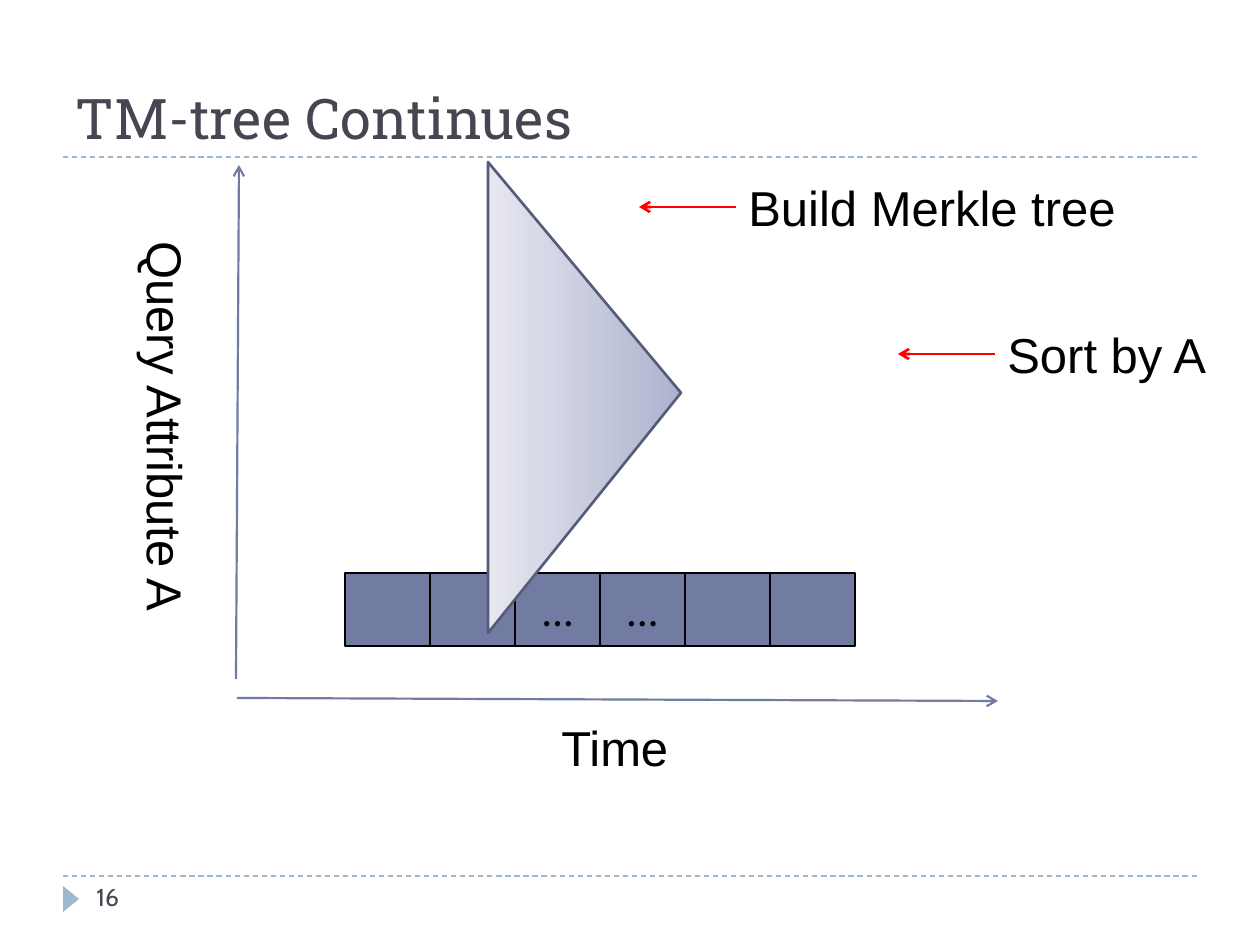
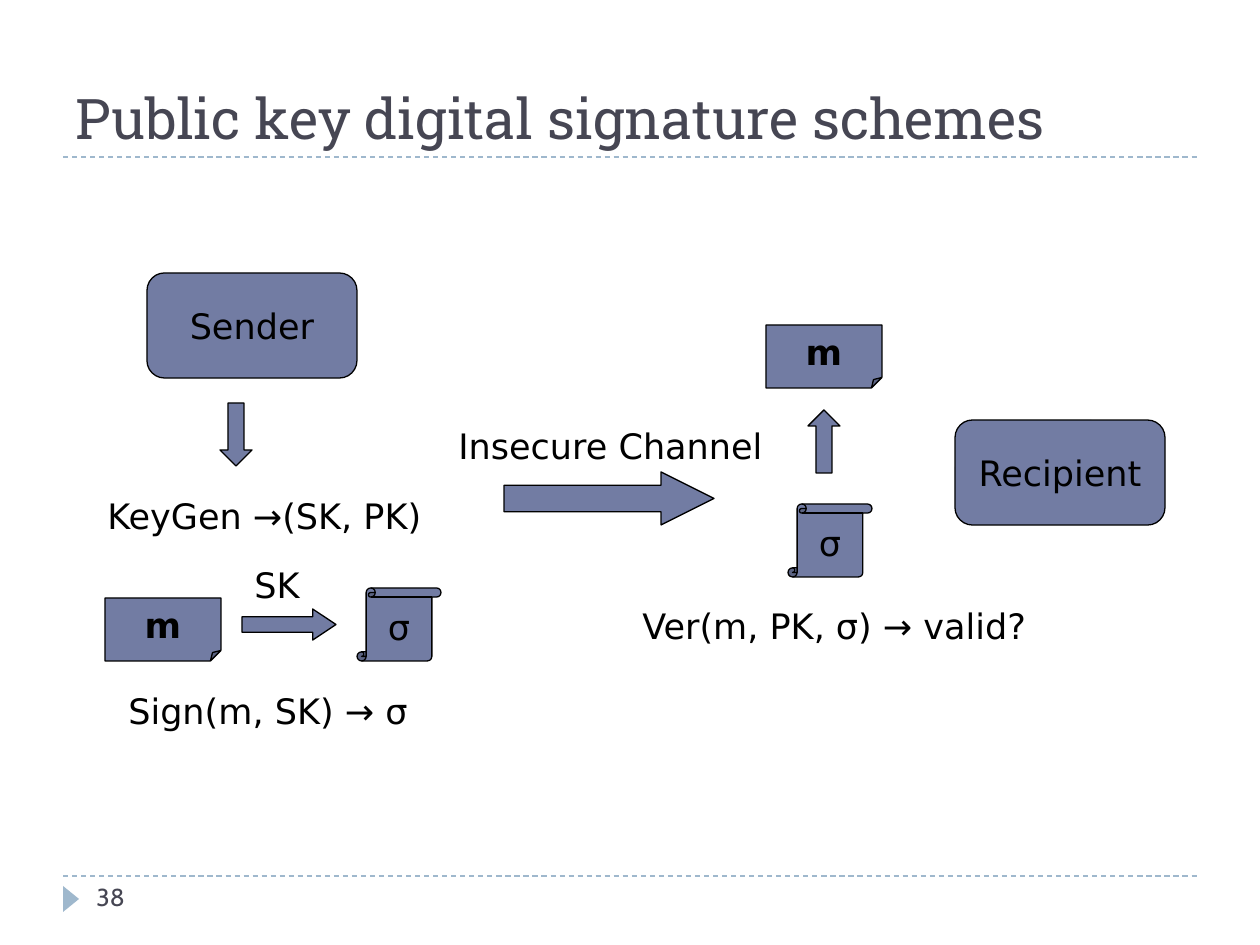
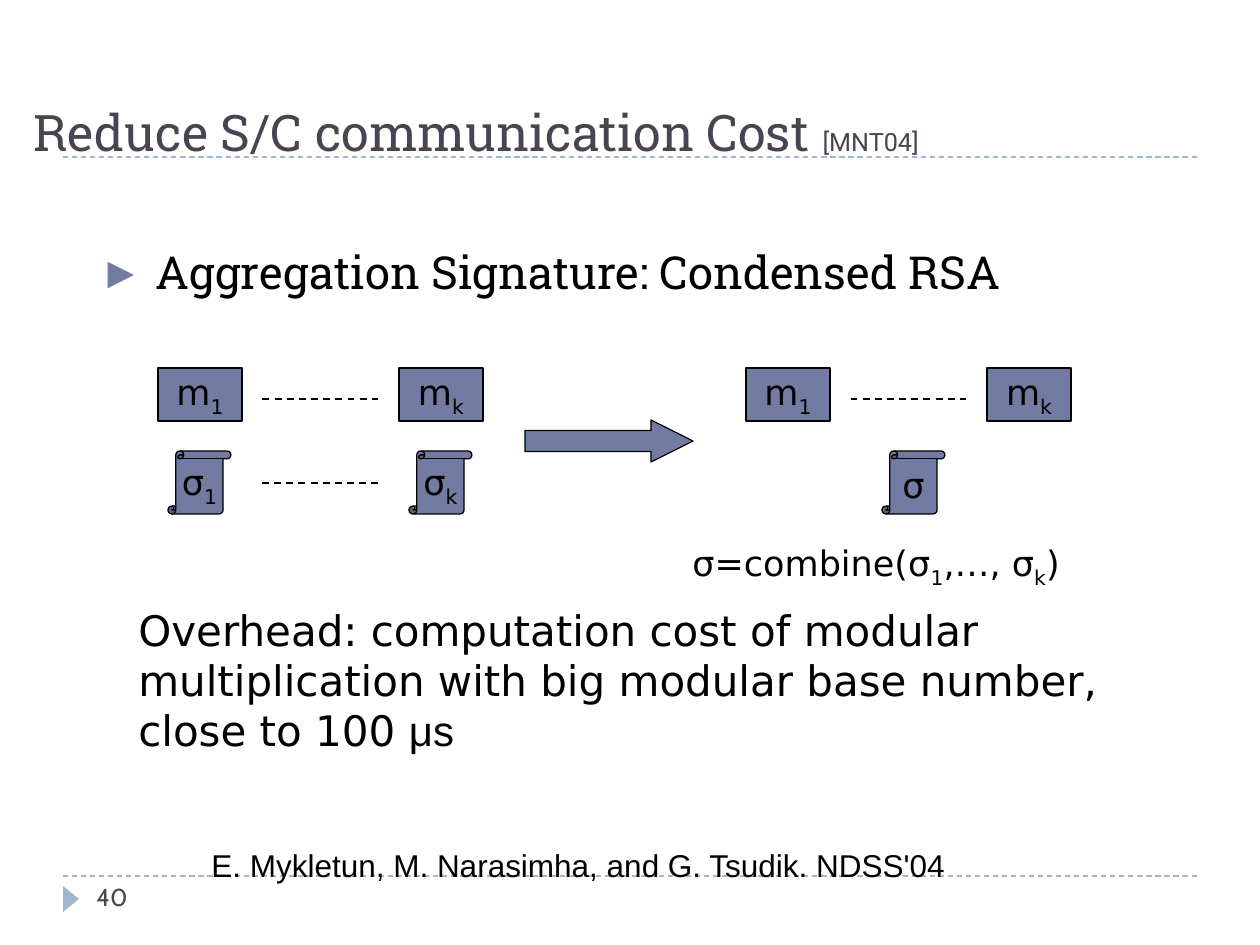
import pptx
import pptx.dml.color
import pptx.enum.dml
import pptx.enum.shapes
import pptx.enum.text
import pptx.oxml.ns
import pptx.util
from lxml import etree

PX = 914400 / 126
SLATE, PALE_BLUE, INK, BLACK, RED = "727CA3", "9FB8CD", "464653", "000000", "FF0000"
TITLE_FONT, LABEL_FONT, PLAIN_FONT = "Roboto Slab", "DejaVu Sans", "Arial"
TITLE_ONLY, TITLE_AND_BODY = 5, 1
SHAPE = pptx.enum.shapes.MSO_SHAPE
ALIGN = pptx.enum.text.PP_ALIGN
ANCHOR = pptx.enum.text.MSO_ANCHOR


def px(*lengths):
    """Turn px lengths into a list of EMU lengths."""
    return [pptx.util.Emu(round(length * PX)) for length in lengths]


def color(hex_code):
    """Turn a hex string into a colour."""
    return pptx.dml.color.RGBColor.from_string(hex_code)


def add_xml(parent, tag, **attributes):
    """Append a DrawingML element to a parent."""
    return etree.SubElement(parent, pptx.oxml.ns.qn(tag), attributes)


def set_font(font, size, name, hex_code=BLACK, bold=None):
    """Set the size, typeface, colour and weight of a font."""
    font.size = pptx.util.Pt(size)
    font.name = name
    font.bold = bold
    font.color.rgb = color(hex_code)


def write(paragraph, text):
    """Write text in which an underscore lowers the character after it."""
    first, *lowered = text.split("_")
    if first:
        paragraph.add_run().text = first
    for piece in lowered:
        subscript = paragraph.add_run()
        subscript.text = piece[0]
        subscript._r.get_or_add_rPr().set("baseline", "-25000")
        if piece[1:]:
            paragraph.add_run().text = piece[1:]


def place(shape, left, top, width, height):
    """Move and size a placeholder."""
    shape.left, shape.top, shape.width, shape.height = px(left, top, width, height)
    shape.text_frame.auto_size = pptx.enum.text.MSO_AUTO_SIZE.NONE


def caption(slide, text, box, size=20, font=LABEL_FONT, hex_code=BLACK):
    """Add free text, one paragraph a line, and return its frame."""
    frame = slide.shapes.add_textbox(*px(*box)).text_frame
    frame.word_wrap = True
    for index, line in enumerate(text.split("\n")):
        paragraph = frame.add_paragraph() if index else frame.paragraphs[0]
        write(paragraph, line)
        set_font(paragraph.font, size, font, hex_code)
    return frame


def block(slide, kind, box, text="", size=20, font=LABEL_FONT, bold=None, adjust=None):
    """Add a slate shape with a black outline and a centred label."""
    shape = slide.shapes.add_shape(kind, *px(*box))
    shape.shadow.inherit = False
    shape.fill.solid()
    shape.fill.fore_color.rgb = color(SLATE)
    shape.line.color.rgb = color(BLACK)
    shape.line.width = pptx.util.Pt(0.75)
    if adjust is not None:
        shape.adjustments[1] = adjust
    if text:
        frame = shape.text_frame
        frame.word_wrap = False
        frame.vertical_anchor = ANCHOR.MIDDLE
        paragraph = frame.paragraphs[0]
        paragraph.alignment = ALIGN.CENTER
        write(paragraph, text)
        set_font(paragraph.font, size, font, BLACK, bold)
    return shape


def stroke(slide, start, end, hex_code, width, dashed=False, arrow=False):
    """Add a straight line, dashed or with an arrowhead at its end."""
    connector = slide.shapes.add_connector(
        pptx.enum.shapes.MSO_CONNECTOR.STRAIGHT, *px(*start, *end))
    connector.line.color.rgb = color(hex_code)
    connector.line.width = pptx.util.Pt(width)
    if dashed:
        connector.line.dash_style = pptx.enum.dml.MSO_LINE.DASH
    if arrow:
        add_xml(connector.line._get_or_add_ln(), "a:tailEnd", type="arrow")
    add_xml(connector._element.spPr, "a:effectLst")


def start_slide(deck, layout, title, number, box=(63, 21, 1134, 136), size=32):
    """Add a slide with the shared rules, page marker, number and title."""
    slide = deck.slides.add_slide(deck.slide_layouts[layout])
    for rule_y in (876, 157):
        stroke(slide, (63, rule_y), (1197, rule_y), PALE_BLUE, 0.75, dashed=True)
    marker = block(slide, SHAPE.ISOSCELES_TRIANGLE, (58, 891, 26, 16))
    marker.rotation = 90
    marker.fill.fore_color.rgb = color(PALE_BLUE)
    marker.line.fill.background()
    caption(slide, number, (84, 876, 273, 50), 14, "Cabin", INK)
    heading = slide.shapes.title
    place(heading, *box)
    heading.text_frame.vertical_anchor = ANCHOR.BOTTOM
    paragraph = heading.text_frame.paragraphs[0]
    paragraph.alignment = ALIGN.LEFT
    write(paragraph, title)
    set_font(paragraph.font, size, TITLE_FONT, INK)
    return slide


def bullet(slide, text, box):
    """Write one bulleted line in the body placeholder."""
    body = slide.placeholders[1]
    place(body, *box)
    paragraph = body.text_frame.paragraphs[0]
    write(paragraph, text)
    paragraph.line_spacing = 0.9
    paragraph.space_before = pptx.util.Pt(6)
    properties = paragraph._p.get_or_add_pPr()
    indent = px(48)[0]
    properties.set("marL", str(indent))
    properties.set("indent", str(-indent))
    add_xml(add_xml(properties, "a:buClr"), "a:srgbClr", val=SLATE)
    add_xml(properties, "a:buSzPct", val="76000")
    add_xml(properties, "a:buFont", typeface=LABEL_FONT)
    add_xml(properties, "a:buChar", char="▶")
    set_font(paragraph.font, 26, TITLE_FONT)


def side_note(slide, text, left, top, width):
    """Add a note with a red arrow pointing left from it."""
    caption(slide, text, (left, top, width, 72), 28, PLAIN_FONT)
    stroke(slide, (left, top + 36), (left - 97, top + 36), RED, 1.5, arrow=True)


def message(slide, left, top):
    """Add a message sheet."""
    block(slide, SHAPE.FOLDED_CORNER, (left, top, 116, 63), "m", bold=True)


def signature(slide, left, top):
    """Add a signature scroll."""
    block(slide, SHAPE.VERTICAL_SCROLL, (left, top, 84, 73), "σ")


def series(slide, kind, symbol, left, top, width, height, rule_y):
    """Add the first and k-th item of a series, joined by a dashed line."""
    for index, shift in (("1", 0), ("k", 241)):
        block(slide, kind, (left + shift, top, width, height), f"{symbol}_{index}")
    middle = left + (241 + width) / 2
    stroke(slide, (middle - 58, rule_y), (middle + 58, rule_y), BLACK, 1, dashed=True)


def tree_slide(deck):
    """Build the slide on the TM-tree."""
    slide = start_slide(deck, TITLE_ONLY, "TM-tree Continues", "16")
    stroke(slide, (237, 698), (998, 701), SLATE, 1.25, arrow=True)
    caption(slide, "Time", (549, 711, 149, 72), 28, PLAIN_FONT)
    stroke(slide, (236, 679), (239, 165), SLATE, 1.25, arrow=True)
    for column, label in enumerate(("", "", "…", "…", "", "")):
        block(slide, SHAPE.RECTANGLE, (345 + 85 * column, 573, 85, 73), label, 24, "Lato")
    attribute = caption(slide, "Query Attribute A", (118, 229, 84, 435), 28, PLAIN_FONT)
    attribute._txBody.bodyPr.set("vert", "eaVert")
    side_note(slide, "Sort by A", 995, 318, 232)
    tree = block(slide, SHAPE.ISOSCELES_TRIANGLE, (349, 301, 471, 193))
    tree.rotation = 90
    tree.adjustments[0] = 0.49
    tree.fill.gradient()
    tree.fill.gradient_angle = 270
    for stop, hex_code in zip(tree.fill.gradient_stops, ("ADB3CF", "E6E7EF")):
        stop.color.rgb = color(hex_code)
    tree.line.color.rgb = color("545C79")
    tree.line.width = pptx.util.Pt(1.5)
    side_note(slide, "Build Merkle tree", 736, 171, 404)


def signature_slide(deck):
    """Build the slide on signing and verifying."""
    slide = start_slide(deck, TITLE_ONLY, "Public key digital signature schemes", "38")
    block(slide, SHAPE.ROUNDED_RECTANGLE, (147, 273, 210, 105), "Sender")
    block(slide, SHAPE.ROUNDED_RECTANGLE, (955, 420, 210, 105), "Recipient")
    block(slide, SHAPE.RIGHT_ARROW, (504, 472, 210, 53), adjust=1)
    block(slide, SHAPE.RIGHT_ARROW, (242, 609, 94, 31), adjust=0.75)
    block(slide, SHAPE.DOWN_ARROW, (220, 403, 32, 63))
    block(slide, SHAPE.UP_ARROW, (808, 410, 32, 63))
    message(slide, 105, 598)
    signature(slide, 357, 588)
    message(slide, 766, 325)
    signature(slide, 788, 504)
    for text, left, top, width in (
            ("KeyGen →(SK, PK)", 95, 488, 368),
            ("SK", 242, 557, 84),
            ("Sign(m, SK) → σ", 116, 683, 368),
            ("Insecure Channel", 446, 418, 368),
            ("Ver(m, PK, σ) → valid?", 630, 598, 441)):
        caption(slide, text, (left, top, width, 54))


def aggregation_slide(deck):
    """Build the slide on combined signatures."""
    slide = start_slide(deck, TITLE_AND_BODY, "Reduce S/C communication Cost ", "40",
                        (21, 111, 1137, 57), 28.8)
    citation = slide.shapes.title.text_frame.paragraphs[0].add_run()
    citation.text = "[MNT04]"
    set_font(citation.font, 14.4, "Roboto", INK)
    bullet(slide, "Aggregation Signature: Condensed RSA", (95, 244, 1071, 71))
    for left in (158, 746):
        series(slide, SHAPE.RECTANGLE, "m", left, 368, 84, 53, 399)
    series(slide, SHAPE.VERTICAL_SCROLL, "σ", 168, 451, 63, 63, 483)
    block(slide, SHAPE.RIGHT_ARROW, (525, 420, 168, 42), adjust=1)
    block(slide, SHAPE.VERTICAL_SCROLL, (882, 451, 63, 63), "σ")
    caption(slide, "σ=combine(σ_1,…, σ_k)", (680, 535, 403, 54))
    overhead = caption(
        slide, "Overhead: computation cost of modular\n"
        "multiplication with big modular base number, close to 100 ",
        (126, 598, 1018, 164), 24)
    unit = overhead.paragraphs[1].add_run()
    unit.text = "μs"
    unit.font.name = PLAIN_FONT
    caption(slide, "E. Mykletun, M. Narasimha, and G. Tsudik. NDSS'04",
            (199, 840, 780, 50), 18, PLAIN_FONT)


def main():
    """Build the three slides and save the deck."""
    deck = pptx.Presentation()
    deck.slide_width, deck.slide_height = px(1260, 945)
    tree_slide(deck)
    signature_slide(deck)
    aggregation_slide(deck)
    deck.save("out.pptx")


if __name__ == "__main__":
    main()
